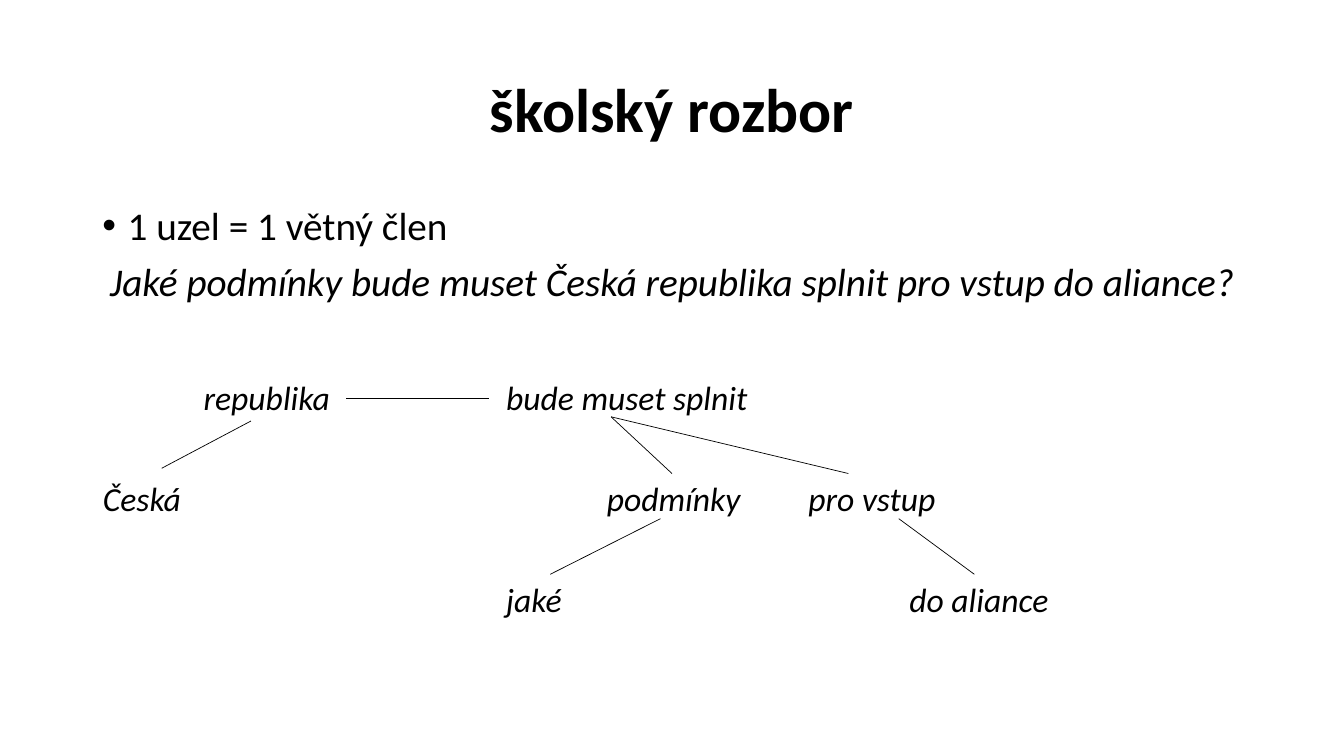
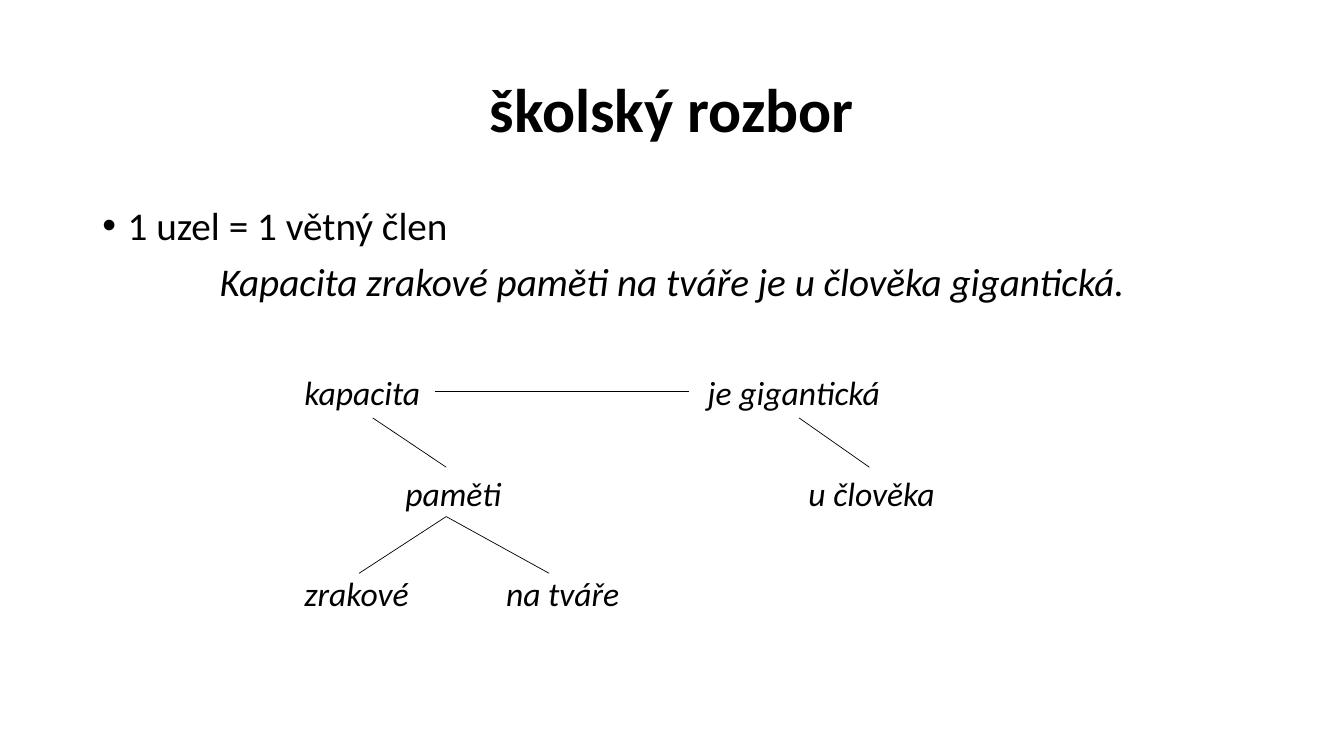
from lxml import etree
from pptx import Presentation
from pptx import util as u
from pptx.dml.color import RGBColor
from pptx.enum import shapes, text
from pptx.oxml.ns import qn

# Shared style, lengths in px
PX = 9525
FONT, INK = "Calibri", "000000"
TITLE_BOX = (88, 38, 1104, 139)
BODY_BOX = (88, 192, 1104, 140)
HANGING = 24
COLUMN_LEFT, COLUMN, ROW, WORD_HEIGHT = 98, 96, 96, 39

TITLE = "školský rozbor"
RULE = "1 uzel = 1 větný člen"

# Words: text, column, row, width in columns; branches: x1, y1, x2, y2
TREES = [
    {
        "sentence": "Jaké podmínky bude muset Česká republika splnit pro vstup do aliance?",
        "top": 359,
        "words": [
            ("republika", 1, 0, 2), ("bude muset splnit", 4, 0, 3),
            ("Česká", 0, 1, 2), ("podmínky", 5, 1, 2), ("pro vstup", 7, 1, 2),
            ("jaké", 4, 2, 2), ("do aliance", 8, 2, 2),
        ],
        "branches": [
            (330, 379, 466, 379), (239, 401, 154, 446),
            (582, 397, 640, 451), (582, 397, 808, 451),
            (629, 494, 524, 547), (856, 494, 928, 547),
        ],
    },
    {
        "sentence": "Kapacita zrakové paměti na tváře je u člověka gigantická.",
        "top": 354,
        "words": [
            ("kapacita", 2, 0, 2), ("je gigantická", 6, 0, 2),
            ("paměti", 3, 1, 2), ("u člověka", 7, 1, 2),
            ("zrakové", 2, 2, 2), ("na tváře", 4, 2, 2),
        ],
        "branches": [
            (414, 373, 656, 373), (355, 398, 425, 445), (761, 398, 828, 445),
            (425, 492, 342, 546), (425, 492, 523, 546),
        ],
    },
]


def px(length):
    return u.Emu(length * PX)


def color(value):
    return RGBColor.from_string(value)


def place(shape, left, top, width, height):
    shape.left, shape.top = px(left), px(top)
    shape.width, shape.height = px(width), px(height)


def style(para, size, bold=False, italic=False):
    font = para.font
    font.name, font.size, font.bold, font.italic = FONT, u.Pt(size), bold, italic
    font.color.rgb = color(INK)


def set_indent(para, left, first):
    properties = para._p.get_or_add_pPr()
    properties.set("marL", str(px(left)))
    properties.set("indent", str(px(first)))
    return properties


def prepare_layout(deck):
    """Place the title and body once, for every slide."""
    layout = deck.slide_layouts[1]
    for holder, box in zip(layout.placeholders, (TITLE_BOX, BODY_BOX)):
        place(holder, *box)
    return layout


def fill_title(page):
    frame = page.shapes.title.text_frame
    frame.text = TITLE
    frame.auto_size = text.MSO_AUTO_SIZE.NONE
    frame.vertical_anchor = text.MSO_ANCHOR.MIDDLE
    para = frame.paragraphs[0]
    para.alignment = text.PP_ALIGN.CENTER
    para.line_spacing = 0.9
    style(para, 44, bold=True)


def fill_body(page, sentence):
    frame = page.placeholders[1].text_frame
    frame.auto_size = text.MSO_AUTO_SIZE.NONE
    frame.text = f"{RULE}\n{sentence}"
    rule, example = frame.paragraphs
    for para in (rule, example):
        para.line_spacing = 0.9
        para.space_before = u.Pt(10)
        style(para, 28, italic=para is example)
    set_indent(rule, HANGING, -HANGING)
    example.alignment = text.PP_ALIGN.CENTER
    etree.SubElement(set_indent(example, 0, 0), qn("a:buNone"))
    # Paragraph properties keep their schema order: spacing, bullet, run defaults
    properties = example._p.pPr
    defaults = properties.find(qn("a:defRPr"))
    if defaults is not None:
        properties.append(defaults)


def add_word(page, top, word, column, row, span):
    box = page.shapes.add_textbox(
        px(COLUMN_LEFT + column * COLUMN), px(top + row * ROW),
        px(span * COLUMN), px(WORD_HEIGHT))
    frame = box.text_frame
    frame.word_wrap = True
    frame.margin_left = frame.margin_right = 0
    frame.margin_top = frame.margin_bottom = 0
    frame.text = word
    style(frame.paragraphs[0], 24, italic=True)


def add_branch(page, *ends):
    line = page.shapes.add_connector(
        shapes.MSO_CONNECTOR.STRAIGHT, *(px(end) for end in ends))
    line.line.color.rgb = color(INK)
    line.line.width = u.Pt(0.5)
    etree.SubElement(line._element.spPr, qn("a:effectLst"))


def main():
    deck = Presentation()
    deck.slide_width, deck.slide_height = px(1280), px(720)
    layout = prepare_layout(deck)
    for tree in TREES:
        page = deck.slides.add_slide(layout)
        fill_title(page)
        fill_body(page, tree["sentence"])
        for word in tree["words"]:
            add_word(page, tree["top"], *word)
        for branch in tree["branches"]:
            add_branch(page, *branch)
    deck.save("out.pptx")


if __name__ == "__main__":
    main()
